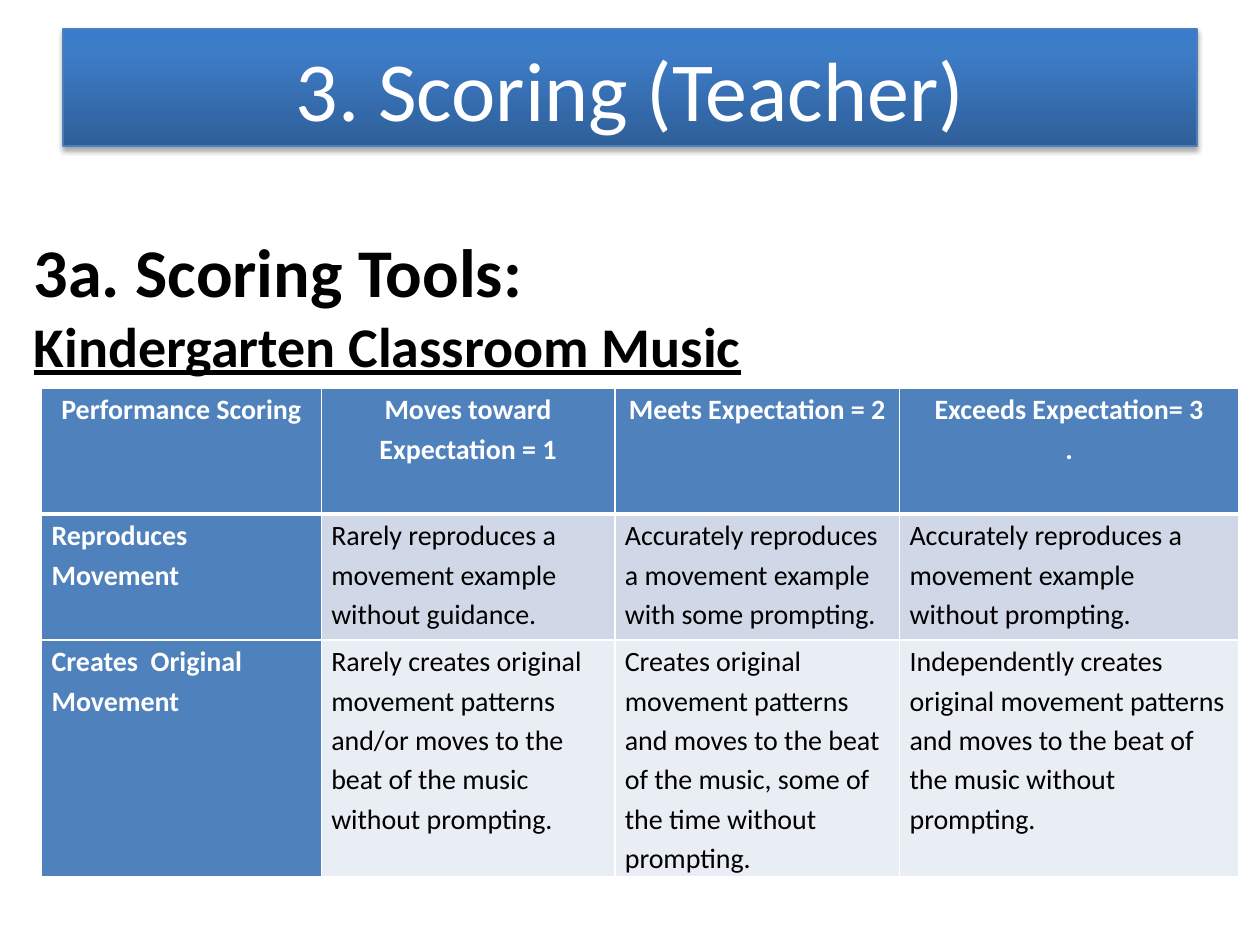
from pptx import Presentation
from pptx.dml.color import RGBColor
from pptx.enum import shapes, text
from pptx.oxml import parse_xml
from pptx.oxml.ns import nsdecls, qn
from pptx.util import Inches, Pt

WHITE = RGBColor(0xFF, 0xFF, 0xFF)
BLACK = RGBColor(0, 0, 0)
BLUE = RGBColor(0x4F, 0x81, 0xBD)
BANNER_LINE = RGBColor(0x4B, 0x7E, 0xBC)
BAND_FILLS = [BLUE, RGBColor(0xD0, 0xD8, 0xE8), RGBColor(0xE9, 0xED, 0xF4)]
BANNER_STOPS = [
    (0, RGBColor(0x2F, 0x5F, 0x99)),
    (80, RGBColor(0x3D, 0x7C, 0xC7)),
    (100, RGBColor(0x3A, 0x7C, 0xCB)),
]
COLUMN_WIDTHS = [2.22, 2.33, 2.26, 2.69]
ROW_HEIGHTS = [1, 1, 1.88]
RUBRIC = [
    ["Performance Scoring", "Moves toward Expectation = 1",
     "Meets Expectation = 2", "Exceeds Expectation= 3\n."],
    ["Reproduces Movement",
     "Rarely reproduces a movement example without guidance.",
     "Accurately reproduces a movement example with some prompting.",
     "Accurately reproduces a movement example without prompting."],
    ["Creates  Original Movement",
     "Rarely creates original movement patterns and/or moves to the beat "
     "of the music without prompting.",
     "Creates original movement patterns and moves to the beat of the music, "
     "some of the time without prompting.",
     "Independently creates original movement patterns and moves to the beat "
     "of the music without prompting."],
]


def set_font(paragraph, size, color, bold=False):
    font = paragraph.font
    font.name = "Calibri"
    font.size = Pt(size)
    font.bold = bold
    font.color.rgb = color


def set_borders(cell, bottom_width):
    """Give the cell white 1 pt edges, with its own width at the bottom."""
    properties = cell._tc.get_or_add_tcPr()
    for index, side in enumerate("LRTB"):
        width = Pt(bottom_width if side == "B" else 1)
        properties.insert(index, parse_xml(
            f'<a:ln{side} {nsdecls("a")} w="{width}"><a:solidFill>'
            f'<a:srgbClr val="{WHITE}"/></a:solidFill></a:ln{side}>'))


presentation = Presentation()
presentation.slide_width = Inches(10)
presentation.slide_height = Inches(7.5)
slide = presentation.slides.add_slide(presentation.slide_layouts[6])

# Headings above the table
headings = slide.shapes.add_textbox(
    Inches(0.17), Inches(1.77), Inches(9.67), Inches(5.5)).text_frame
headings.word_wrap = True
headings.text = "3a. Scoring Tools:\nKindergarten Classroom Music"
tools, course = headings.paragraphs
set_font(tools, 39, BLACK, bold=True)
tools.space_before = Pt(2)
set_font(course, 32, BLACK, bold=True)
course.font.underline = True

# Title banner
banner = slide.shapes.add_shape(
    shapes.MSO_SHAPE.RECTANGLE, Inches(0.5), Inches(0.23), Inches(9), Inches(0.93))
banner.fill.gradient()
gradient = banner._element.spPr.find(qn("a:gradFill"))
stops = "".join(
    f'<a:gs pos="{position * 1000}"><a:srgbClr val="{color}"/></a:gs>'
    for position, color in BANNER_STOPS)
gradient.getparent().replace(gradient, parse_xml(
    f'<a:gradFill {nsdecls("a")} rotWithShape="1"><a:gsLst>{stops}</a:gsLst>'
    '<a:lin ang="16200000" scaled="0"/></a:gradFill>'))
banner.line.color.rgb = BANNER_LINE
banner.line.width = Pt(0.75)
banner.shadow.inherit = False
banner._element.spPr.find(qn("a:effectLst")).append(parse_xml(
    f'<a:outerShdw {nsdecls("a")} blurRad="{Pt(3.1)}" dist="{Pt(1.8)}" '
    'dir="5400000" rotWithShape="0"><a:srgbClr val="000000">'
    '<a:alpha val="35000"/></a:srgbClr></a:outerShdw>'))
banner.text_frame.text = "3. Scoring (Teacher)"
banner.text_frame.vertical_anchor = text.MSO_ANCHOR.MIDDLE
title = banner.text_frame.paragraphs[0]
title.alignment = text.PP_ALIGN.CENTER
set_font(title, 48, WHITE)

# Scoring table
table = slide.shapes.add_table(
    len(ROW_HEIGHTS), len(COLUMN_WIDTHS), Inches(0.33), Inches(3.08),
    Inches(sum(COLUMN_WIDTHS)), Inches(sum(ROW_HEIGHTS))).table
for column, width in zip(table.columns, COLUMN_WIDTHS):
    column.width = Inches(width)
for row, height in zip(table.rows, ROW_HEIGHTS):
    row.height = Inches(height)

for row_index, row_texts in enumerate(RUBRIC):
    for column_index, cell_text in enumerate(row_texts):
        is_header = row_index == 0 or column_index == 0
        cell = table.cell(row_index, column_index)
        cell.margin_left = cell.margin_right = Inches(0.08)
        cell.margin_top = cell.margin_bottom = 0
        cell.fill.solid()
        cell.fill.fore_color.rgb = BLUE if is_header else BAND_FILLS[row_index]
        set_borders(cell, 3 if row_index == 0 else 1)
        cell.text = cell_text
        for paragraph in cell.text_frame.paragraphs:
            paragraph.line_spacing = 1.15
            if row_index == 0:
                paragraph.alignment = text.PP_ALIGN.CENTER
            set_font(paragraph, 16, WHITE if is_header else BLACK, bold=is_header)

presentation.save("out.pptx")
